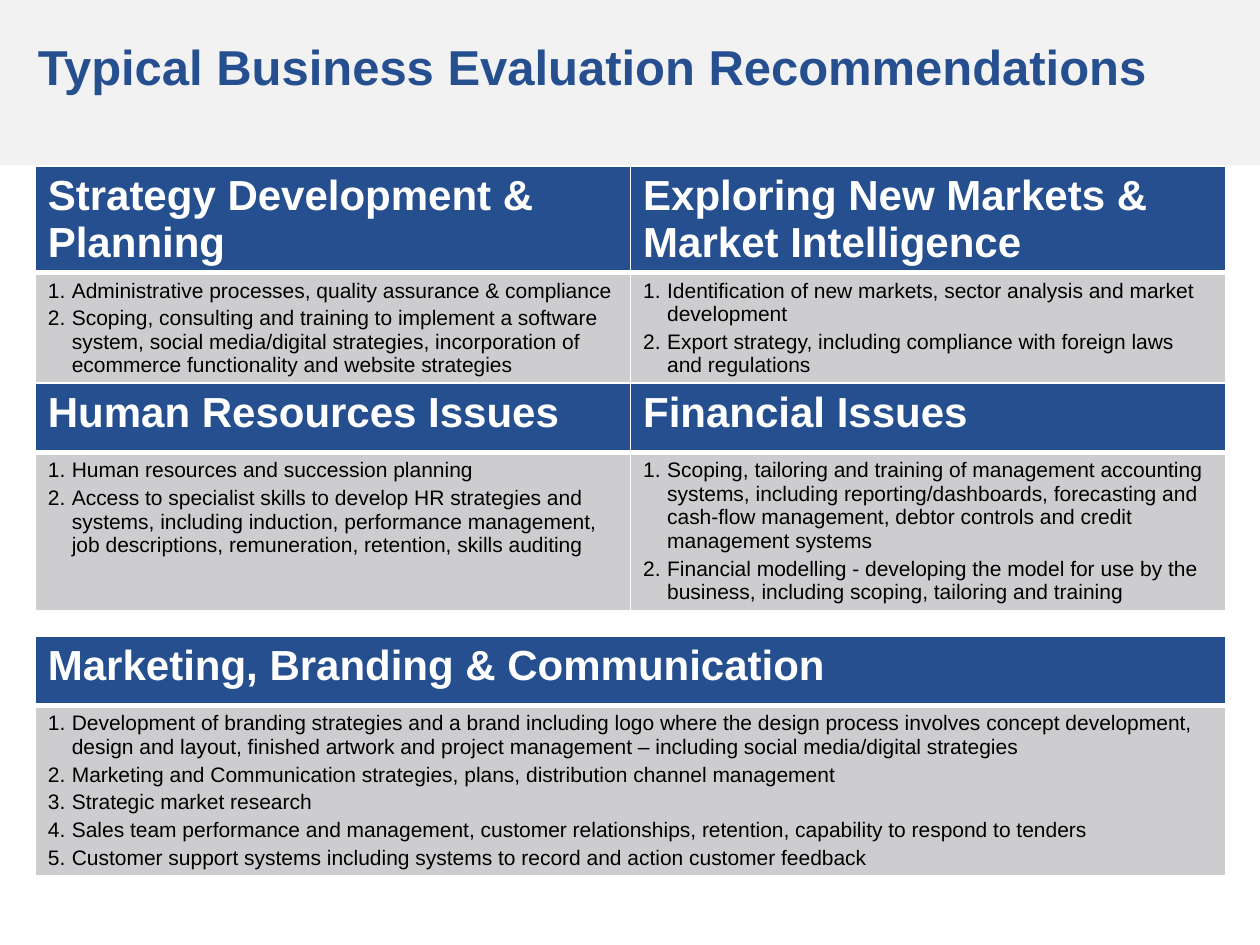
from lxml import etree
from pptx import Presentation
from pptx import util as u
from pptx.dml.color import RGBColor
from pptx.enum import text
from pptx.oxml.ns import qn

BLUE = RGBColor(0x26, 0x4F, 0x90)
GREY = RGBColor(0xCD, 0xCD, 0xD0)
PALE = RGBColor(0xF2, 0xF2, 0xF2)
WHITE = RGBColor(0xFF, 0xFF, 0xFF)
BLACK = RGBColor(0, 0, 0)
FONT = "Arial"

WIDTH, HEIGHT = u.Inches(10), u.Inches(7.5)
LEFT, SPAN = 0.028, 0.945  # shares of the slide's width
INDENT = u.Inches(0.19)

# Each band: top, heading height and body height in inches, then its topics
BANDS = [
    (1.32, 0.84, 0.87, [
        ("Strategy Development & Planning", [
            "Administrative processes, quality assurance & compliance",
            "Scoping, consulting and training to implement a software system, social media/digital "
            "strategies, incorporation of ecommerce functionality and website strategies",
        ]),
        ("Exploring New Markets & Market Intelligence", [
            "Identification of new markets, sector analysis and market development",
            "Export strategy, including compliance with foreign laws and regulations",
        ]),
    ]),
    (3.04, 0.55, 1.25, [
        ("Human Resources Issues", [
            "Human resources and succession planning",
            "Access to specialist skills to develop HR strategies and systems, including induction, "
            "performance management, job descriptions, remuneration, retention, skills auditing",
        ]),
        ("Financial Issues", [
            "Scoping, tailoring and training of management accounting systems, including "
            "reporting/dashboards, forecasting and cash-flow management, debtor controls and "
            "credit management systems",
            "Financial modelling - developing the model for use by the business, including "
            "scoping, tailoring and training",
        ]),
    ]),
    (5.05, 0.55, 1.34, [
        ("Marketing, Branding & Communication", [
            "Development of branding strategies and a brand including logo where the design process "
            "involves concept development, design and layout, finished artwork and project "
            "management – including social media/digital strategies",
            "Marketing and Communication strategies, plans, distribution channel management",
            "Strategic market research",
            "Sales team performance and management, customer relationships, retention, capability "
            "to respond to tenders",
            "Customer support systems including systems to record and action customer feedback",
        ]),
    ]),
]


def style_font(font, size, color, bold):
    font.name, font.size, font.bold = FONT, u.Pt(size), bold
    font.color.rgb = color


def add_title(page, top, height):
    box = page.shapes.title
    box.left, box.top, box.width, box.height = 0, top, WIDTH, height
    box.fill.solid()
    box.fill.fore_color.rgb = PALE
    frame = box.text_frame
    frame.text = "Typical Business Evaluation Recommendations"
    frame.auto_size = text.MSO_AUTO_SIZE.NONE
    frame.vertical_anchor = text.MSO_ANCHOR.TOP
    frame.margin_left, frame.margin_top = u.Inches(0.3), u.Inches(0.37)
    para = frame.paragraphs[0]
    para.alignment = text.PP_ALIGN.LEFT
    style_font(para.runs[0].font, 28, BLUE, True)


def set_borders(cell, bottom):
    """White rules, placed ahead of the cell's fill."""
    props = cell._tc.get_or_add_tcPr()
    widths = {"a:lnL": 1, "a:lnR": 1, "a:lnT": 1, "a:lnB": bottom}
    for place, (tag, points) in enumerate(widths.items()):
        line = etree.Element(qn(tag), w=str(u.Pt(points)))
        fill = etree.SubElement(line, qn("a:solidFill"))
        etree.SubElement(fill, qn("a:srgbClr"), val=str(WHITE))
        props.insert(place, line)


def fill_cell(cell, color, bottom):
    cell.fill.solid()
    cell.fill.fore_color.rgb = color
    set_borders(cell, bottom)


def add_heading(cell, heading):
    fill_cell(cell, BLUE, 3)
    cell.text_frame.text = heading
    style_font(cell.text_frame.paragraphs[0].runs[0].font, 24, WHITE, True)


def add_numbered(cell, items):
    fill_cell(cell, GREY, 1)
    frame = cell.text_frame
    frame.text = "\n".join(items)
    for index, para in enumerate(frame.paragraphs):
        props = para._p.get_or_add_pPr()
        props.set("marL", str(INDENT))
        props.set("indent", str(-INDENT))
        etree.SubElement(props, qn("a:buFont"), typeface=FONT)
        etree.SubElement(props, qn("a:buAutoNum"), type="arabicPeriod")
        if index:
            para.space_before = u.Pt(2.4)
        style_font(para.runs[0].font, 12, BLACK, False)


def add_band(page, left, top, width, heights, topics):
    table = page.shapes.add_table(2, len(topics), left, top, width, sum(heights)).table
    for row, height in zip(table.rows, heights):
        row.height = height
    for column, (heading, items) in enumerate(topics):
        table.columns[column].width = width // len(topics)
        add_heading(table.cell(0, column), heading)
        add_numbered(table.cell(1, column), items)


def main():
    deck = Presentation()
    deck.slide_width, deck.slide_height = WIDTH, HEIGHT
    page = deck.slides.add_slide(deck.slide_layouts[5])
    add_title(page, u.Inches(-0.08), u.Inches(1.39))
    for top, head, body, topics in BANDS:
        add_band(page, int(WIDTH * LEFT), u.Inches(top), int(WIDTH * SPAN),
                 [u.Inches(head), u.Inches(body)], topics)
    deck.save("out.pptx")


if __name__ == "__main__":
    main()
